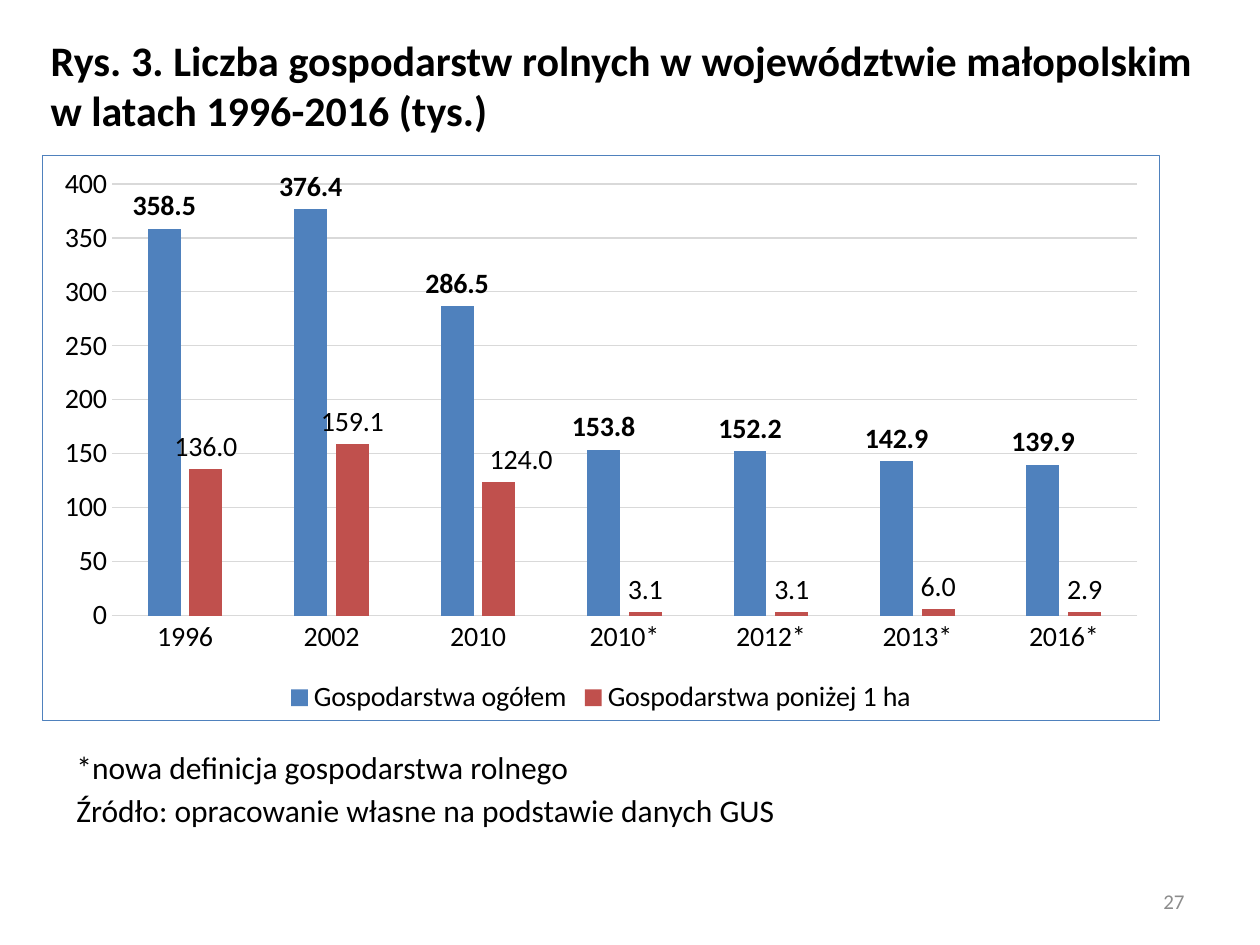
from dataclasses import dataclass

import lxml.etree
import pptx
import pptx.chart.data
import pptx.dml.color
import pptx.enum.chart
import pptx.enum.text
import pptx.oxml
import pptx.oxml.ns
import pptx.util

SCALE = 914400 / 126
FONT = "Calibri"
BLACK, GRID = "000000", "D9D9D9"
ALIGN = pptx.enum.text.PP_ALIGN
ANCHOR = pptx.enum.text.MSO_ANCHOR
FORMAT = "#,##0.0"
YEARS = ["1996", "2002", "2010", "2010*", "2012*", "2013*", "2016*"]


@dataclass(frozen=True)
class Box:
    left: int
    top: int
    width: int
    height: int

    def emu(self) -> list[int]:
        return [round(n * SCALE) for n in (self.left, self.top, self.width, self.height)]


@dataclass(frozen=True)
class Series:
    name: str
    values: list[float]
    color: str
    bold: bool


@dataclass(frozen=True)
class Note:
    box: Box
    lines: list[str]
    size: int
    align: ALIGN
    anchor: ANCHOR = ANCHOR.TOP
    color: str = BLACK
    bold: bool = False
    space: float = 1.0


FARMS = [
    Series("Gospodarstwa ogółem", [358.5, 376.4, 286.5, 153.8, 152.2, 142.9, 139.9], "4F81BD", True),
    Series("Gospodarstwa poniżej 1 ha", [136, 159.1, 124, 3.1, 3.1, 6, 2.9], "C0504D", False),
]
TITLE = Note(
    Box(38, 28, 1167, 152),
    ["Rys. 3. Liczba gospodarstw rolnych w województwie małopolskim w latach 1996-2016 (tys.)"],
    24, ALIGN.JUSTIFY, bold=True,
)
NOTES = [
    Note(
        Box(64, 736, 997, 101),
        ["*nowa definicja gospodarstwa rolnego", "Źródło: opracowanie własne na podstawie danych GUS"],
        18, ALIGN.JUSTIFY, space=1.15,
    ),
    Note(Box(903, 876, 294, 50), ["27"], 12, ALIGN.RIGHT, ANCHOR.MIDDLE, "8C8C8C"),
]


def rgb(color: str) -> pptx.dml.color.RGBColor:
    return pptx.dml.color.RGBColor.from_string(color)


def style(font, size: int, color: str = BLACK, bold: bool = False) -> None:
    font.name = FONT
    font.size = pptx.util.Pt(size)
    font.bold = bold
    font.color.rgb = rgb(color)


def rule(line, color: str) -> None:
    line.color.rgb = rgb(color)
    line.width = pptx.util.Pt(0.75)


def write(shape, note: Note) -> None:
    shape.left, shape.top, shape.width, shape.height = note.box.emu()
    frame = shape.text_frame
    frame.word_wrap = True
    frame.auto_size = pptx.enum.text.MSO_AUTO_SIZE.NONE
    frame.vertical_anchor = note.anchor
    frame.text = "\n".join(note.lines)
    for para in frame.paragraphs:
        para.alignment = note.align
        para.line_spacing = note.space
        style(para.font, note.size, note.color, note.bold)


def border(chart, color: str) -> None:
    edge = pptx.oxml.parse_xml(
        f'<c:spPr {pptx.oxml.ns.nsdecls("c", "a")}><a:noFill/><a:ln w="9525">'
        f'<a:solidFill><a:srgbClr val="{color}"/></a:solidFill></a:ln></c:spPr>'
    )
    chart.element.find(pptx.oxml.ns.qn("c:chart")).addnext(edge)


def shift(chart, series, index: int, across: float, down: float) -> None:
    label = series.points[index].data_label
    style(label.font, 16)
    label.position = pptx.enum.chart.XL_LABEL_POSITION.OUTSIDE_END
    node = chart.element.find(".//" + pptx.oxml.ns.qn("c:dLbl"))
    spot = pptx.oxml.parse_xml(
        f'<c:layout {pptx.oxml.ns.nsdecls("c")}><c:manualLayout>'
        f'<c:x val="{across}"/><c:y val="{down}"/></c:manualLayout></c:layout>'
    )
    node.insert(1, spot)
    form = lxml.etree.Element(pptx.oxml.ns.qn("c:numFmt"), formatCode=FORMAT, sourceLinked="0")
    spot.addnext(form)


def draw_chart(slide, box: Box) -> None:
    data = pptx.chart.data.CategoryChartData(number_format=FORMAT)
    data.categories = YEARS
    for farm in FARMS:
        data.add_series(farm.name, farm.values)
    kind = pptx.enum.chart.XL_CHART_TYPE.COLUMN_CLUSTERED
    chart = slide.shapes.add_chart(kind, *box.emu(), data).chart
    style(chart.font, 16)
    chart.has_title = False
    chart.has_legend = True
    chart.legend.position = pptx.enum.chart.XL_LEGEND_POSITION.BOTTOM
    chart.legend.include_in_layout = False
    style(chart.legend.font, 16)
    for axis in (chart.category_axis, chart.value_axis):
        axis.major_tick_mark = axis.minor_tick_mark = pptx.enum.chart.XL_TICK_MARK.NONE
        style(axis.tick_labels.font, 16)
    rule(chart.category_axis.format.line, GRID)
    scale = chart.value_axis
    scale.minimum_scale, scale.maximum_scale, scale.major_unit = 0, 400, 50
    scale.tick_labels.number_format = "0"
    scale.tick_labels.number_format_is_linked = False
    scale.format.line.fill.background()
    rule(scale.major_gridlines.format.line, GRID)
    plot = chart.plots[0]
    plot.gap_width, plot.overlap, plot.vary_by_categories = 219, -27, False
    for series, farm in zip(plot.series, FARMS):
        series.format.fill.solid()
        series.format.fill.fore_color.rgb = rgb(farm.color)
        labels = series.data_labels
        labels.show_value = True
        labels.number_format = FORMAT
        labels.number_format_is_linked = False
        labels.position = pptx.enum.chart.XL_LABEL_POSITION.OUTSIDE_END
        style(labels.font, 16, bold=farm.bold)
    shift(chart, plot.series[1], 2, 0.02, 0)
    border(chart, FARMS[0].color)


def main() -> None:
    deck = pptx.Presentation()
    deck.slide_width, deck.slide_height = pptx.util.Inches(10), pptx.util.Inches(7.5)
    slide = deck.slides.add_slide(deck.slide_layouts[5])
    write(slide.shapes.title, TITLE)
    draw_chart(slide, Box(42, 155, 1118, 566))
    for note in NOTES:
        write(slide.shapes.add_textbox(*note.box.emu()), note)
    deck.save("out.pptx")


if __name__ == "__main__":
    main()
